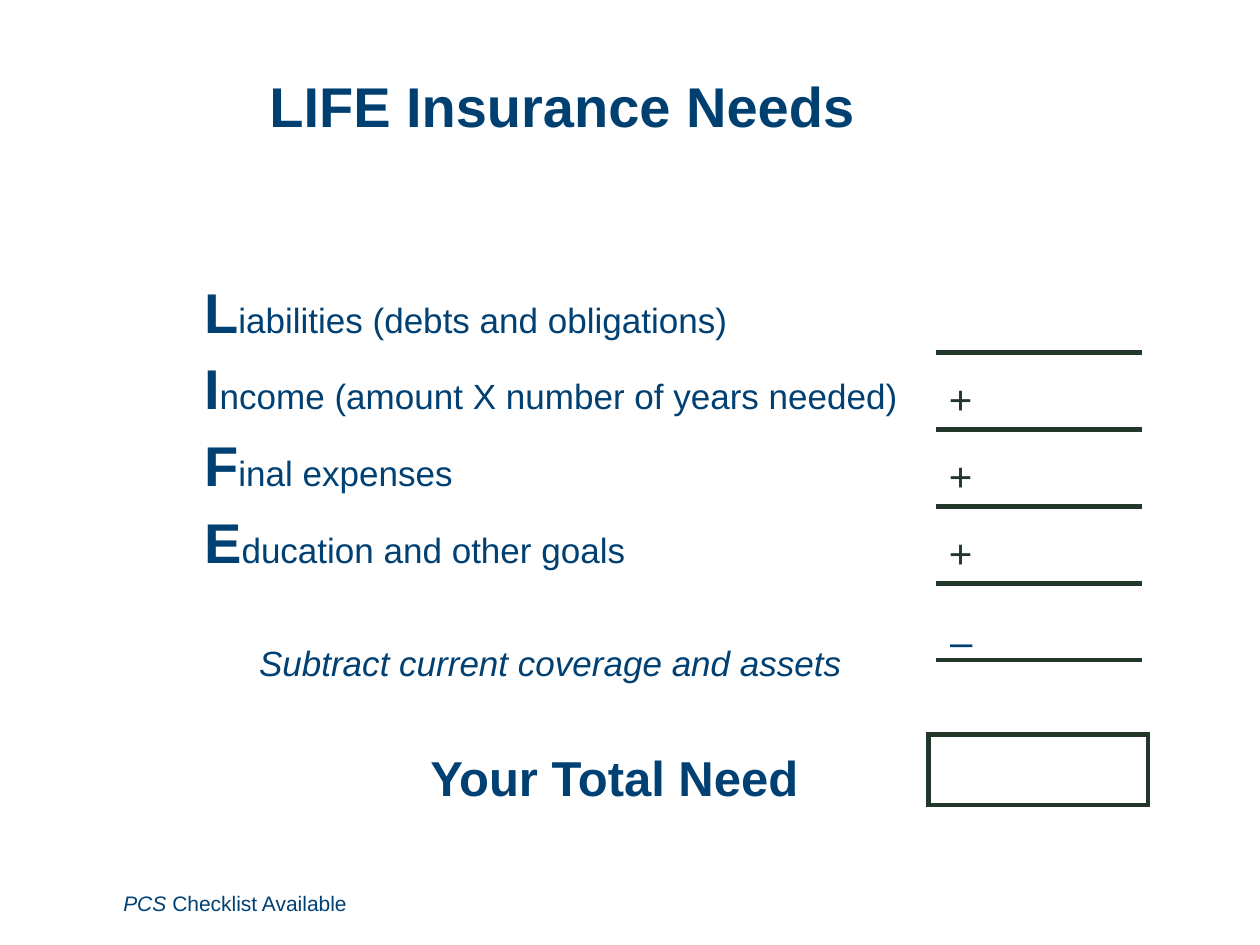
import pptx
import pptx.util
import pptx.dml.color
import pptx.enum.text
import pptx.oxml
import pptx.oxml.ns

Inches = pptx.util.Inches
ALIGN = pptx.enum.text.PP_ALIGN
ANCHOR = pptx.enum.text.MSO_ANCHOR

COLORS = {"title": "004071", "navy": "004072", "ink": "23362A"}
NO_STYLE = "{2D5ABB26-0587-4C30-8999-92F81FD0307C}"
RULE_WIDTH = 3

FORMATS = {
    "title": {"size": 32, "bold": True, "color": "title"},
    "initial": {"size": 32, "bold": True},
    "need": {"size": 20},
    "sign": {"size": 23, "color": "ink"},
    "minus": {"size": 23},
    "subtract": {"size": 20, "italic": True},
    "total": {"size": 28, "bold": True},
    "checklist": {"size": 12},
    "checklist_name": {"size": 12, "italic": True},
}

NEEDS = [
    ("L", "iabilities (debts and obligations)", ""),
    ("I", "ncome (amount X number of years needed)", "+"),
    ("F", "inal expenses", "+"),
    ("E", "ducation and other goals", "+"),
]
NEED_COLUMNS = [5.91, 1.63]
NEED_ROWS = [0.61] * 5 + [0.64] * 2
RULED_ROWS = len(NEEDS) + 1

LABELS = [
    ((2.04, 0.11, 7.26, 1.45), ALIGN.LEFT, ANCHOR.MIDDLE,
     [("LIFE Insurance Needs", "title")]),
    ((0.77, 5.04, 6.01, 0.44), ALIGN.RIGHT, ANCHOR.TOP,
     [("Subtract current coverage and assets", "subtract")]),
    ((2.98, 5.88, 3.79, 0.57), ALIGN.CENTER, ANCHOR.TOP,
     [("Your Total Need", "total")]),
    ((0.88, 7.02, 6.82, 0.3), ALIGN.LEFT, ANCHOR.TOP,
     [("PCS ", "checklist_name"), ("Checklist\u00a0Available".replace("\u00a0", " "), "checklist")]),
]


def write(frame, pieces, align=ALIGN.LEFT):
    paragraph = frame.paragraphs[0]
    paragraph.alignment = align
    for words, format_name in pieces:
        run = paragraph.add_run()
        run.text = words
        values = {"name": "Arial", "bold": False, "italic": False, **FORMATS[format_name]}
        color = COLORS[values.pop("color", "navy")]
        values["size"] = pptx.util.Pt(values["size"])
        for attribute, value in values.items():
            setattr(run.font, attribute, value)
        run.font.color.rgb = pptx.dml.color.RGBColor.from_string(color)


def add_label(slide, box, align, anchor, pieces):
    frame = slide.shapes.add_textbox(*map(Inches, box)).text_frame
    frame.word_wrap = True
    frame.vertical_anchor = anchor
    write(frame, pieces, align)


def add_plain_table(slide, left, top, columns, rows):
    table = slide.shapes.add_table(
        len(rows), len(columns), Inches(left), Inches(top),
        Inches(sum(columns)), Inches(sum(rows))).table
    table.first_row = table.horz_banding = False
    table._tbl.tblPr.find(pptx.oxml.ns.qn("a:tableStyleId")).text = NO_STYLE
    for column, width in zip(table.columns, columns):
        column.width = Inches(width)
    for row, height in zip(table.rows, rows):
        row.height = Inches(height)
    for cell in table.iter_cells():
        cell.fill.background()
    return table


def rule(cell, sides):
    properties = cell._tc.get_or_add_tcPr()
    for position, side in enumerate(sides):
        line = pptx.oxml.parse_xml(
            f'<a:ln{side} {pptx.oxml.ns.nsdecls("a")} w="{pptx.util.Pt(RULE_WIDTH)}">'
            f'<a:solidFill><a:srgbClr val="{COLORS["ink"]}"/></a:solidFill></a:ln{side}>')
        properties.insert(position, line)


def main():
    deck = pptx.Presentation()
    deck.slide_width, deck.slide_height = Inches(10), Inches(7.5)
    slide = deck.slides.add_slide(deck.slide_layouts[6])

    needs = add_plain_table(slide, 1.52, 2.19, NEED_COLUMNS, NEED_ROWS)
    for index, (initial, rest, sign) in enumerate(NEEDS):
        write(needs.cell(index, 0).text_frame, [(initial, "initial"), (rest, "need")])
        if sign:
            amount = needs.cell(index, 1)
            amount.vertical_anchor = ANCHOR.BOTTOM
            write(amount.text_frame, [(sign, "sign")])
    for index in range(RULED_ROWS):
        rule(needs.cell(index, 1), "TB" if index else "B")
    for index in range(RULED_ROWS, len(NEED_ROWS)):
        needs.cell(index, 0).merge(needs.cell(index, 1))

    minus = add_plain_table(slide, 7.44, 4.87, [2.01], [0.43])
    write(minus.cell(0, 0).text_frame, [("–", "minus")])

    total = add_plain_table(slide, 7.37, 5.83, [1.74], [0.56])
    rule(total.cell(0, 0), "LRTB")

    for label in LABELS:
        add_label(slide, *label)

    deck.save("out.pptx")


if __name__ == "__main__":
    main()
